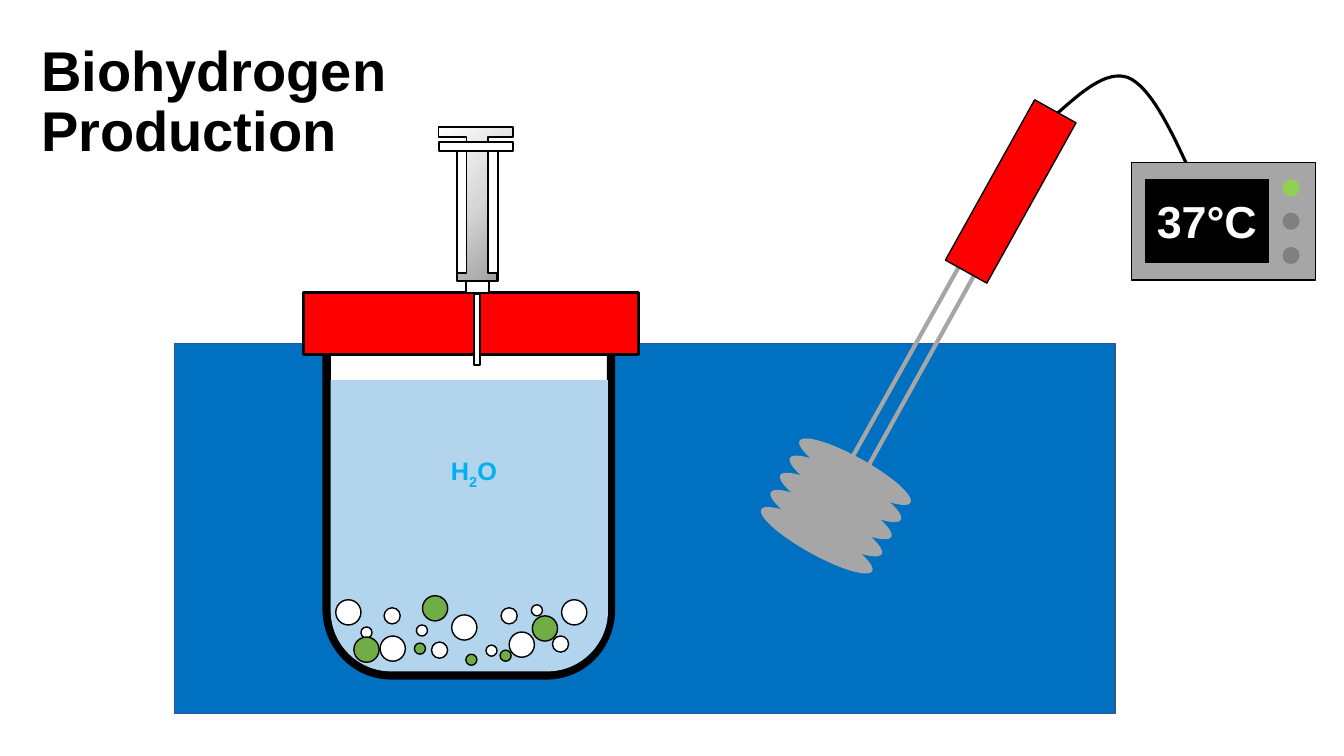
from lxml.etree import SubElement
from pptx import Presentation
from pptx.dml.color import RGBColor
from pptx.enum.shapes import MSO_CONNECTOR, MSO_SHAPE
from pptx.enum.text import MSO_ANCHOR, MSO_AUTO_SIZE, PP_ALIGN
from pptx.oxml import parse_xml
from pptx.oxml.ns import nsdecls, qn
from pptx.util import Inches, Pt

# Content: colours, texts, and lengths in inches
BLACK, WHITE, RED, GRAY = "000000", "FFFFFF", "FF0000", "A6A6A6"
BLUE, WATER, GREEN, CYAN = "0070C0", "B2D4EC", "70AD47", "00B0F0"
FONT = "Arial"
TITLE = ["Biohydrogen", "Production"]
FORMULA = [("H", None), ("2", "-25000"), ("O", "0")]
READING = "37°C"

# Outlines: two numbers make a corner, six make a curve
CABLE = [(10.47, 1.14), (10.72, 0.92, 10.97, 0.69, 11.19, 0.77),
         (11.4, 0.86, 11.59, 1.24, 11.77, 1.63)]
VESSEL = [(3.05, 2.82), (6.26, 2.82), (6.26, 3.47), (6.06, 3.47), (6.06, 3.5),
          (6.06, 3.52, 6.06, 3.54, 6.06, 3.57), (6.06, 6.04),
          (6.06, 6.41, 5.78, 6.7, 5.42, 6.7), (3.88, 6.7),
          (3.53, 6.7, 3.24, 6.41, 3.24, 6.04), (3.24, 3.57),
          (3.24, 3.54, 3.24, 3.52, 3.24, 3.5), (3.25, 3.47), (3.05, 3.47)]
LIQUID = [(3.28, 3.77), (6.03, 3.77), (6.03, 6.06),
          (6.03, 6.39, 5.76, 6.66, 5.43, 6.66), (3.88, 6.66),
          (3.55, 6.66, 3.28, 6.39, 3.28, 6.06)]
PLUNGER = [(4.35, 1.26), (5.09, 1.26), (5.09, 1.36), (4.84, 1.36), (4.84, 2.71),
           (4.93, 2.71), (4.93, 2.78), (4.53, 2.78), (4.53, 2.71), (4.63, 2.71),
           (4.63, 1.36), (4.35, 1.36)]
STOPS = [(0, "979797"), (50, "D7D7D7"), (100, WHITE)]

SYRINGE = [(4.62, 2.79, 0.23, 0.12, WHITE), (4.53, 1.5, 0.41, 1.29, None),
           (4.35, 1.41, 0.74, 0.09, WHITE), (4.7, 2.92, 0.06, 0.7, WHITE)]
# Bubbles: colour, diameter, top left corners
BUBBLES = [
    (WHITE, 0.25, [(3.77, 6.31), (4.48, 6.1), (5.05, 6.27), (5.57, 5.95), (3.33, 5.95)]),
    (WHITE, 0.11, [(3.58, 6.22), (5.27, 6), (4.13, 6.2), (4.82, 6.4)]),
    (WHITE, 0.16, [(4.28, 6.37), (3.81, 6.03), (4.97, 6.03), (5.48, 6.31)]),
    (GREEN, 0.25, [(4.19, 5.91), (3.51, 6.32), (5.28, 6.11)]),
    (GREEN, 0.11, [(4.11, 6.38), (4.62, 6.49), (4.96, 6.45)]),
]
TILT, COILS = 29.1, 5
RODS = [(10.04, 1.7, 8.35, 4.72), (10.2, 1.76, 8.52, 4.79)]
LIGHTS = [(1.78, "92D050"), (2.11, "808080"), (2.45, "808080")]

deck = Presentation()
deck.slide_width, deck.slide_height = Inches(13.33), Inches(7.5)
slide = deck.slides.add_slide(deck.slide_layouts[5])
page = slide.shapes


def tint(hue):
    return RGBColor.from_string(hue)


def paint(item, fill, line, width):
    item.shadow.inherit = False
    if fill:
        item.fill.solid()
        item.fill.fore_color.rgb = tint(fill)
    else:
        item.fill.background()
    if line:
        item.line.color.rgb = tint(line)
        item.line.width = Pt(width)
    else:
        item.line.fill.background()
    return item


def shape(kind, box, fill=None, line=None, width=1, turn=0, home=page):
    item = home.add_shape(kind, *map(Inches, box))
    item.rotation = turn
    return paint(item, fill, line, width)


def rect(*args, **more):
    return shape(MSO_SHAPE.RECTANGLE, *args, **more)


def oval(*args, **more):
    return shape(MSO_SHAPE.OVAL, *args, **more)


def outline(steps, fill=None, line=None, width=1, close=True):
    """Join the step ends with lines, then bend those that are curves."""
    steps = [[round(v * 1000) for v in step] for step in steps]
    ends = [step[-2:] for step in steps]
    left, top = map(min, zip(*ends))
    pen = page.build_freeform(*ends[0], scale=Inches(1) / 1000)
    pen.add_line_segments(ends[1:], close=close)
    item = pen.convert_to_shape()
    legs = list(item._element.iter(qn("a:lnTo")))
    for leg, step in zip(legs, steps[1:]):
        if len(step) == 6:
            bend = parse_xml(f'<a:cubicBezTo {nsdecls("a")}/>')
            for x, y in zip(step[::2], step[1::2]):
                SubElement(bend, qn("a:pt"), x=str(x - left), y=str(y - top))
            leg.getparent().replace(leg, bend)
    return paint(item, fill, line, width)


def write(para, text, size, hue):
    run = para.add_run()
    run.text = text
    run.font.name, run.font.size, run.font.bold = FONT, Pt(size), True
    run.font.color.rgb = tint(hue)
    return run


# Title
title = page.title
title.left, title.top, title.width, title.height = map(Inches, (0.16, 0.3, 11.5, 1.45))
frame = title.text_frame
frame.vertical_anchor = MSO_ANCHOR.MIDDLE
frame.margin_left = Inches(0.25)
para = frame.paragraphs[0]
para.alignment, para.line_spacing = PP_ALIGN.LEFT, 0.9
for n, text in enumerate(TITLE):
    if n:
        para.add_line_break()
    write(para, text, 40, BLACK)

# Cable, water bath and vessel
outline(CABLE, line=BLACK, width=2.25, close=False)
rect((1.73, 3.41, 9.33, 3.67), BLUE, "325491")
outline(VESSEL, WHITE, BLACK, 6)
rect((3, 2.74, 3.31, 0.17), WHITE)
outline(LIQUID, WATER)

# Formula
label = page.add_textbox(*map(Inches, (4.14, 4.47, 1.12, 0.54)))
label.text_frame.word_wrap = True
label.text_frame.auto_size = MSO_AUTO_SIZE.SHAPE_TO_FIT_TEXT
para = label.text_frame.paragraphs[0]
para.alignment = PP_ALIGN.CENTER
for text, shift in FORMULA:
    run = write(para, text, 18, CYAN)
    if shift:
        run.font._element.set("baseline", shift)

# Plunger with a radial gradient, then lid and syringe
plunger = outline(PLUNGER, WHITE, BLACK)
stops = "".join(f'<a:gs pos="{at * 1000}"><a:srgbClr val="{hue}"/></a:gs>'
                for at, hue in STOPS)
blend = parse_xml(f'<a:gradFill {nsdecls("a")}><a:gsLst>{stops}</a:gsLst>'
                  '<a:path path="circle"><a:fillToRect l="100000" t="100000"/>'
                  '</a:path></a:gradFill>')
props = plunger._element.spPr
props.replace(props.find(qn("a:solidFill")), blend)
rect((3.01, 2.9, 3.32, 0.62), RED, BLACK, 2.25)
syringe = page.add_group_shape().shapes
for *box, fill in SYRINGE:
    rect(box, fill, BLACK, 1.5, home=syringe)

# Bubbles
for fill, size, spots in BUBBLES:
    for x, y in spots:
        oval((x, y, size, size), fill, BLACK)

# Heater: coils, rods and handle
heater = page.add_group_shape().shapes
for n in range(COILS):
    oval((7.85 - 0.095 * n, 4.54 + 0.17 * n, 1.26, 0.28), GRAY, turn=TILT, home=heater)
for ends in RODS:
    rod = heater.add_connector(MSO_CONNECTOR.STRAIGHT, *map(Inches, ends))
    rod.line.color.rgb, rod.line.width = tint(GRAY), Pt(3)
    SubElement(rod._element.spPr, qn("a:effectLst"))
rect((9.79, 0.99, 0.47, 1.82), RED, BLACK, turn=TILT, home=heater)

# Thermostat
rect((11.22, 1.61, 1.83, 1.17), GRAY, BLACK)
screen = rect((11.36, 1.78, 1.22, 0.82), BLACK, BLACK)
frame = screen.text_frame
frame.margin_left = frame.margin_right = 0
frame.vertical_anchor = MSO_ANCHOR.MIDDLE
frame.paragraphs[0].alignment = PP_ALIGN.CENTER
write(frame.paragraphs[0], READING, 32, WHITE)
for y, hue in LIGHTS:
    oval((12.72, y, 0.17, 0.17), hue)

deck.save("out.pptx")
